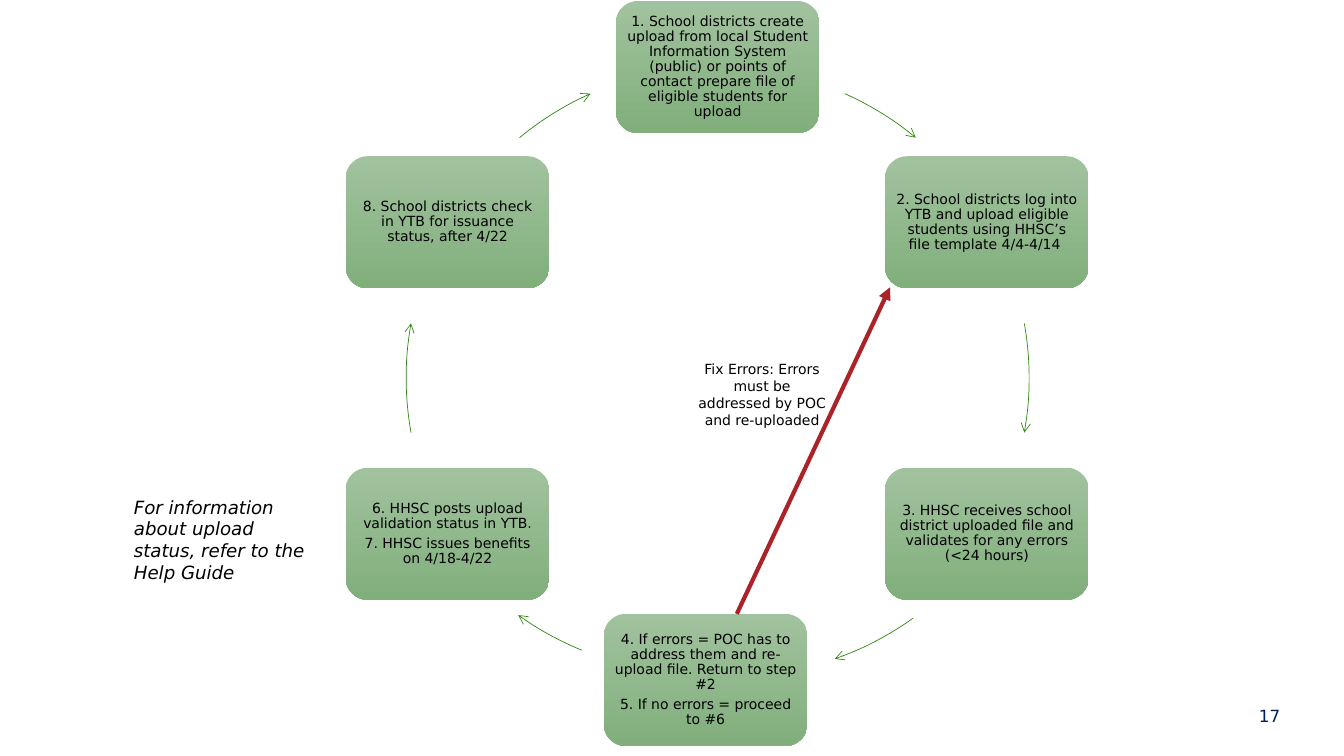
import lxml.etree
import pptx
import pptx.dml.color
import pptx.enum.shapes
import pptx.enum.text
import pptx.oxml.ns
import pptx.util

PX = 9144  # EMU in one px, 100 px to the inch
FONT = "DejaVu Sans"
BLACK = pptx.dml.color.RGBColor(0x00, 0x00, 0x00)
NAVY = pptx.dml.color.RGBColor(0x02, 0x21, 0x51)
RED = pptx.dml.color.RGBColor(0xAB, 0x23, 0x28)
ARROW_GREEN = pptx.dml.color.RGBColor(0x31, 0x88, 0x14)
STEP_TOP = pptx.dml.color.RGBColor(0xA1, 0xC2, 0x9E)
STEP_BOTTOM = pptx.dml.color.RGBColor(0x81, 0xAF, 0x7C)
LEFT = pptx.enum.text.PP_ALIGN.LEFT
CENTER = pptx.enum.text.PP_ALIGN.CENTER
RIGHT = pptx.enum.text.PP_ALIGN.RIGHT
TOP = pptx.enum.text.MSO_ANCHOR.TOP
MIDDLE = pptx.enum.text.MSO_ANCHOR.MIDDLE

STEP_WIDTH, STEP_HEIGHT = 202, 131
RING_SIZE = 618
RING = (403, 66)

STEPS = [  # left, top, paragraphs
    (611, 1, ["1. School districts create upload from local Student Information "
              "System (public) or points of contact prepare file of eligible "
              "students for upload"]),
    (878, 155, ["2. School districts log into YTB and upload eligible students "
                "using HHSC’s file template 4/4-4/14 "]),
    (878, 464, ["3. HHSC receives school district uploaded file and validates "
                "for any errors (<24 hours)"]),
    (599, 609, ["4. If errors = POC has to address them and re-upload file. "
                "Return to step #2",
                "5. If no errors = proceed to #6"]),
    (343, 464, ["6. HHSC posts upload validation status in YTB.",
                "7. HHSC issues benefits on 4/18-4/22"]),
    (343, 155, ["8. School districts check in YTB for issuance status, "
                "after 4/22"]),
]

CYCLE_ARROWS = [  # corner of the ring, start and end in degrees from the top
    (RING, 24.1, 39.5),
    (RING, 79.9, 100.1),
    ((417, 53), 144.4, 160.7),
    ((385, 50), 202.2, 215.6),
    (RING, 259.9, 280.1),
    (RING, 320.5, 335.9),
]


def write(frame, paragraphs, size=10, color=BLACK, italic=False, align=LEFT,
          anchor=TOP, margin=None, line_spacing=None, space_after=None):
    frame.word_wrap = True
    frame.vertical_anchor = anchor
    if margin is not None:
        frame.margin_left = frame.margin_right = margin * PX
        frame.margin_top = frame.margin_bottom = margin * PX
    for number, text in enumerate(paragraphs):
        paragraph = frame.add_paragraph() if number else frame.paragraphs[0]
        paragraph.alignment = align
        if line_spacing is not None:
            paragraph.line_spacing = line_spacing
        if space_after is not None:
            paragraph.space_after = pptx.util.Pt(space_after)
        run = paragraph.add_run()
        run.text = text
        run.font.name = FONT
        run.font.size = pptx.util.Pt(size)
        run.font.italic = italic
        run.font.color.rgb = color


def add_label(slide, left, top, width, height, text, **text_format):
    label = slide.shapes.add_textbox(left * PX, top * PX, width * PX, height * PX)
    write(label.text_frame, [text], **text_format)


def add_step(slide, left, top, paragraphs):
    step = slide.shapes.add_shape(
        pptx.enum.shapes.MSO_SHAPE.ROUNDED_RECTANGLE,
        left * PX, top * PX, STEP_WIDTH * PX, STEP_HEIGHT * PX)
    step.shadow.inherit = False
    step.line.fill.background()
    step.fill.gradient()
    step.fill.gradient_angle = 270
    for stop, color in zip(step.fill.gradient_stops, (STEP_TOP, STEP_BOTTOM)):
        stop.color.rgb = color
    write(step.text_frame, paragraphs, align=CENTER, anchor=MIDDLE, margin=4,
          line_spacing=0.9, space_after=3.5)


def style_arrow(line, color, width, head):
    line.color.rgb = color
    line.width = pptx.util.Pt(width)
    properties = line._get_or_add_ln()
    lxml.etree.SubElement(properties, pptx.oxml.ns.qn("a:tailEnd"), type=head)


def add_cycle_arrow(slide, corner, start, end):
    """Draw an arc of the ring, clockwise, with a head at its end."""
    arc = slide.shapes.add_shape(
        pptx.enum.shapes.MSO_SHAPE.ARC,
        corner[0] * PX, corner[1] * PX, RING_SIZE * PX, RING_SIZE * PX)
    for index, angle in enumerate((start, end)):
        # The preset counts from the right, in 60000ths; adjustments in 100000ths
        arc.adjustments[index] = (angle - 90) % 360 * 0.6
    arc.shadow.inherit = False
    arc.fill.background()
    style_arrow(arc.line, ARROW_GREEN, 0.5, "arrow")


def add_return_arrow(slide, start, end):
    arrow = slide.shapes.add_connector(
        pptx.enum.shapes.MSO_CONNECTOR.STRAIGHT,
        start[0] * PX, start[1] * PX, end[0] * PX, end[1] * PX)
    style_arrow(arrow.line, RED, 3, "triangle")
    lxml.etree.SubElement(arrow._element.spPr, pptx.oxml.ns.qn("a:effectLst"))


def main():
    presentation = pptx.Presentation()
    presentation.slide_width = pptx.util.Emu(12192000)
    presentation.slide_height = 750 * PX
    slide = presentation.slides.add_slide(presentation.slide_layouts[6])

    add_label(slide, 1180, 690, 100, 40, "17", size=12, color=NAVY,
              align=RIGHT, anchor=MIDDLE)
    for step, cycle_arrow in zip(STEPS, CYCLE_ARROWS):
        add_step(slide, *step)
        add_cycle_arrow(slide, *cycle_arrow)
    add_return_arrow(slide, (731, 609), (883, 285))
    add_label(slide, 680, 353, 152, 77,
              "Fix Errors: Errors must be addressed by POC and re-uploaded",
              align=CENTER)
    add_label(slide, 123, 487, 202, 98,
              "For information about upload status, refer to the Help Guide",
              size=13, italic=True)

    presentation.save("out.pptx")


if __name__ == "__main__":
    main()
